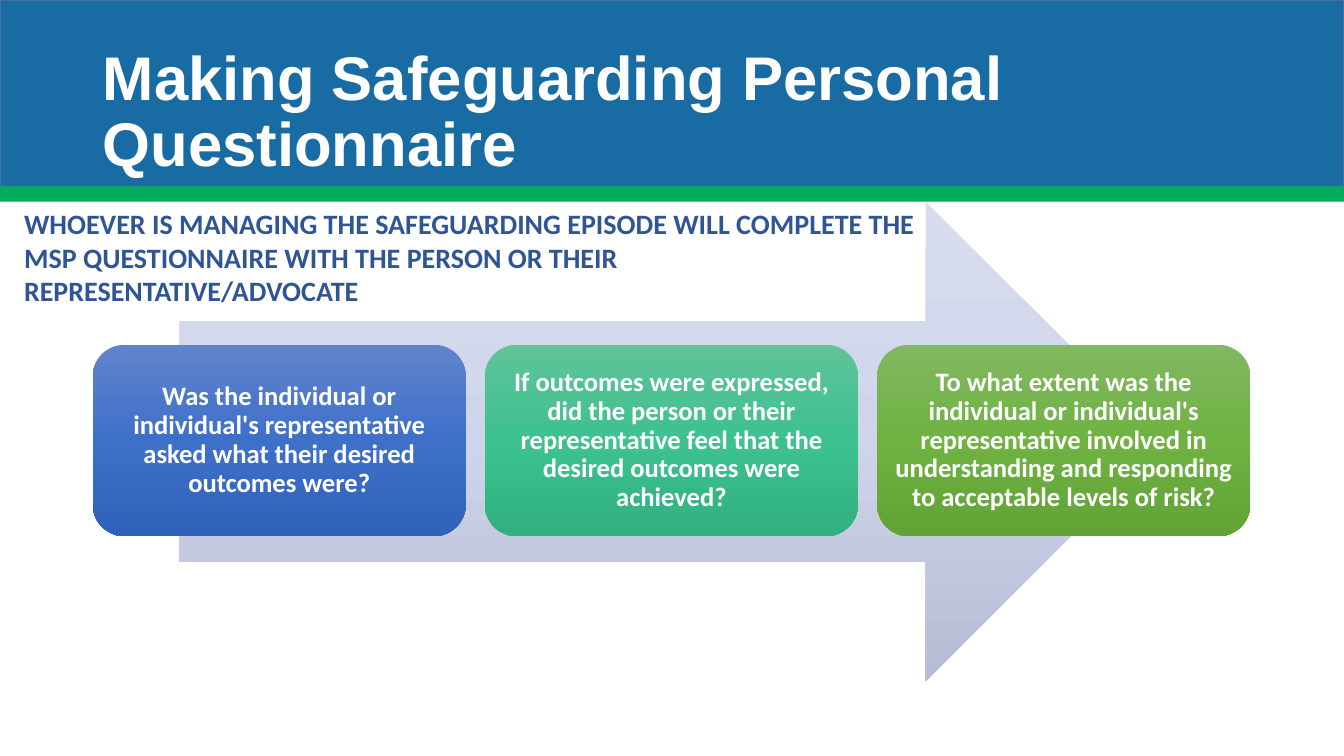
"""Build the Making Safeguarding Personal questionnaire slide."""
from copy import deepcopy

from pptx import Presentation
from pptx.dml.color import RGBColor
from pptx.enum.shapes import MSO_SHAPE
from pptx.enum.text import MSO_ANCHOR, MSO_AUTO_SIZE, PP_ALIGN
from pptx.oxml.ns import qn
from pptx.util import Inches, Pt

RECTANGLE = MSO_SHAPE.RECTANGLE
ROUNDED = MSO_SHAPE.ROUNDED_RECTANGLE
RIGHT_ARROW = MSO_SHAPE.RIGHT_ARROW
LEFT, CENTER = PP_ALIGN.LEFT, PP_ALIGN.CENTER
TOP, MIDDLE = MSO_ANCHOR.TOP, MSO_ANCHOR.MIDDLE
NO_AUTOFIT = MSO_AUTO_SIZE.NONE

prs = Presentation()
prs.slide_width, prs.slide_height = Inches(13.33), Inches(7.5)
slide = prs.slides.add_slide(prs.slide_layouts[5])


def add_panel(kind, left, top, width, height, colors):
    """Add a shape filled with one colour or a top-to-bottom gradient."""
    panel = slide.shapes.add_shape(kind, Inches(left), Inches(top), Inches(width), Inches(height))
    panel.shadow.inherit = False
    panel.line.fill.background()
    if len(colors) == 1:
        panel.fill.solid()
        panel.fill.fore_color.rgb = RGBColor.from_string(colors[0])
        return panel
    panel.fill.gradient()
    panel.fill.gradient_angle = 270
    stop_list = panel.element.spPr.find(qn("a:gradFill")).find(qn("a:gsLst"))
    stop_list.append(deepcopy(stop_list[-1]))
    for i, (stop, color) in enumerate(zip(panel.fill.gradient_stops, colors)):
        stop.position = i / (len(colors) - 1)
        stop.color.rgb = RGBColor.from_string(color)
    return panel


def write(shape, text, size, color="FFFFFF", font="Calibri", align=LEFT, anchor=MIDDLE,
          spacing=1.0, margin=None):
    """Put bold formatted text into a shape."""
    frame = shape.text_frame
    frame.text = text
    frame.word_wrap = True
    frame.auto_size = NO_AUTOFIT
    frame.vertical_anchor = anchor
    if margin is not None:
        frame.margin_left = frame.margin_right = Inches(margin)
        frame.margin_top = frame.margin_bottom = Inches(margin)
    paragraph = frame.paragraphs[0]
    paragraph.alignment = align
    paragraph.line_spacing = spacing
    run_font = paragraph.runs[0].font
    run_font.name, run_font.size, run_font.bold = font, Pt(size), True
    run_font.color.rgb = RGBColor.from_string(color)


banner = add_panel(RECTANGLE, 0, 0, 13.33, 1.85, ["196BA3"])
banner.line.color.rgb = RGBColor.from_string("43739E")
banner.line.width = Pt(1)
green_stripe = add_panel(RECTANGLE, 0, 1.85, 13.33, 0.15, ["00AC5D"])

title = slide.shapes.title
title.left, title.top = Inches(0.92), Inches(0.4)
title.width, title.height = Inches(10.98), Inches(1.45)
write(title, "Making Safeguarding Personal Questionnaire", 44, font="Arial", spacing=0.9)
green_stripe.element.addnext(title.element)

add_panel(RIGHT_ARROW, 1.78, 2, 9.78, 4.76, ["D8DDEE", "CED5EB", "B5BCD3"])

questions = [
    ("Was the individual or individual's representative asked what their desired "
     "outcomes were?", ["6183CB", "3E70CA", "3062BB"]),
    ("If outcomes were expressed, did the person or their representative feel that "
     "the desired outcomes were achieved?", ["60C39A", "3DC18F", "31B080"]),
    ("To what extent was the individual or individual's representative involved in "
     "understanding and responding to acceptable levels of risk?",
     ["81B861", "6FB242", "62A336"]),
]
CARD_WIDTH, CARD_GAP = 3.7, 0.19
for i, (question, colors) in enumerate(questions):
    card = add_panel(ROUNDED, 0.92 + i * (CARD_WIDTH + CARD_GAP), 3.42, CARD_WIDTH, 1.9, colors)
    write(card, question, 19, align=CENTER, spacing=0.9, margin=0.08)

instruction = slide.shapes.add_textbox(Inches(0.14), Inches(2), Inches(9.33), Inches(1.11))
write(instruction,
      "WHOEVER IS MANAGING THE SAFEGUARDING EPISODE WILL COMPLETE THE MSP QUESTIONNAIRE "
      "WITH THE PERSON OR THEIR REPRESENTATIVE/ADVOCATE",
      20, color="2F5597", anchor=TOP)

prs.save("out.pptx")
